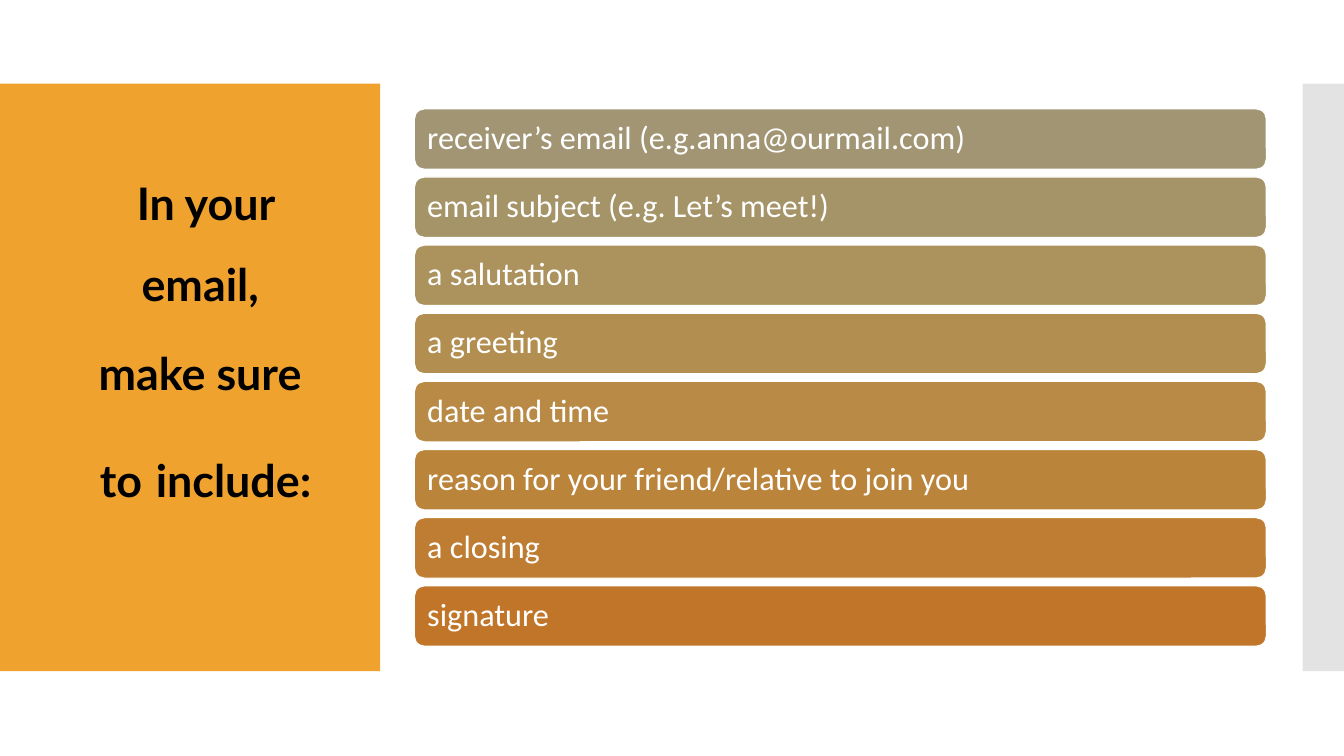
"""Build the email checklist slide."""
from dataclasses import dataclass

from lxml import etree
from pptx import Presentation
from pptx.dml.color import RGBColor
from pptx.enum.shapes import MSO_SHAPE
from pptx.enum.text import MSO_ANCHOR, MSO_AUTO_SIZE, PP_ALIGN
from pptx.oxml.ns import qn
from pptx.shapes.autoshape import Shape
from pptx.slide import Slide
from pptx.util import Inches, Pt

RECTANGLE, ROUNDED = MSO_SHAPE.RECTANGLE, MSO_SHAPE.ROUNDED_RECTANGLE
TOP, MIDDLE = MSO_ANCHOR.TOP, MSO_ANCHOR.MIDDLE
LEFT, CENTER = PP_ALIGN.LEFT, PP_ALIGN.CENTER
NO_AUTOFIT = MSO_AUTO_SIZE.NONE

COLOURS = {
    "orange": "F0A22E", "grey": "C8C8C8", "black": "000000", "white": "FFFFFF",
    "bar1": "A19574", "bar2": "A69469", "bar3": "AC925D", "bar4": "B28E50",
    "bar5": "B88A45", "bar6": "BB843B", "bar7": "BE7D32", "bar8": "C17529",
}
TITLE_LINES = [
    [("In your email, ", 32)],
    [("make sure ", 32)],
    [("to", 32), (" ", 40), ("include:", 32)],
]
CHECKLIST = [
    "receiver’s email (e.g.anna@ourmail.com)",
    "email subject (e.g. Let’s meet!)",
    "a salutation",
    "a greeting",
    "date and time",
    "reason for your friend/relative to join you",
    "a closing ",
    "signature",
]
BAR_TOP, BAR_STEP = 1.08, 0.676
TITLE_FRAME = {"word_wrap": True, "auto_size": NO_AUTOFIT, "vertical_anchor": TOP}
TITLE_PARAGRAPH = {"alignment": CENTER, "line_spacing": 1.5, "space_before": Pt(0),
                   "space_after": Pt(6)}
BAR_FRAME = {"word_wrap": True, "vertical_anchor": MIDDLE,
             "margin_left": Inches(0.1), "margin_right": Inches(0.1),
             "margin_top": Inches(0.1), "margin_bottom": Inches(0.1)}
BAR_PARAGRAPH = {"alignment": LEFT, "line_spacing": 0.9}


@dataclass
class Block:
    """A filled shape, placed in inches."""

    left: float
    top: float
    width: float
    height: float
    colour: str
    opacity: int = 100


@dataclass
class Bar(Block):
    """A rounded checklist bar with its text."""

    text: str = ""


def colour(name: str) -> RGBColor:
    """Look up a named colour."""
    return RGBColor.from_string(COLOURS[name])


def apply(target: object, values: dict) -> None:
    """Set every format value on the target."""
    for name, value in values.items():
        setattr(target, name, value)


def draw_block(page: Slide, block: Block, kind: MSO_SHAPE = RECTANGLE) -> Shape:
    """Draw a filled shape without outline or shadow."""
    box = page.shapes.add_shape(kind, Inches(block.left), Inches(block.top),
                                Inches(block.width), Inches(block.height))
    box.shadow.inherit = False
    box.fill.solid()
    box.fill.fore_color.rgb = colour(block.colour)
    box.line.fill.background()
    if block.opacity < 100:
        fill = box.element.spPr.find(qn("a:solidFill")).find(qn("a:srgbClr"))
        etree.SubElement(fill, qn("a:alpha"), val=str(block.opacity * 1000))
    return box


def draw_bar(page: Slide, bar: Bar) -> None:
    """Draw one checklist bar with a white outline."""
    box = draw_block(page, bar, ROUNDED)
    box.line.color.rgb = colour("white")
    box.line.width = Pt(0.85)
    apply(box.text_frame, BAR_FRAME)
    para = box.text_frame.paragraphs[0]
    apply(para, BAR_PARAGRAPH)
    span = para.add_run()
    span.text = bar.text
    apply(span.font, {"name": "Calibri", "size": Pt(23)})
    span.font.color.rgb = colour("white")


def write_title(page: Slide) -> None:
    """Place the title in front of its panel and fill it."""
    title = page.shapes.title
    title.element.getparent().append(title.element)
    apply(title, {"left": Inches(0.74), "top": Inches(1.43),
                  "width": Inches(2.6), "height": Inches(3.6)})
    frame = title.text_frame
    apply(frame, TITLE_FRAME)
    for index, spans in enumerate(TITLE_LINES):
        para = frame.add_paragraph() if index else frame.paragraphs[0]
        apply(para, TITLE_PARAGRAPH)
        for text, size in spans:
            span = para.add_run()
            span.text = text
            apply(span.font, {"name": "Lato", "size": Pt(size), "bold": True})
            span.font.color.rgb = colour("black")


def main() -> None:
    """Build and save the deck."""
    deck = Presentation()
    apply(deck, {"slide_width": Inches(13.33), "slide_height": Inches(7.5)})
    page = deck.slides.add_slide(deck.slide_layouts.get_by_name("Title Only"))
    draw_block(page, Block(0, 0.83, 3.77, 5.83, "orange"))
    draw_block(page, Block(12.92, 0.83, 0.41, 5.83, "grey", 50))
    write_title(page)
    for index, text in enumerate(CHECKLIST):
        draw_bar(page, Bar(4.11, BAR_TOP + index * BAR_STEP, 8.45, 0.6,
                           f"bar{index + 1}", text=text))
    deck.save("out.pptx")


if __name__ == "__main__":
    main()
